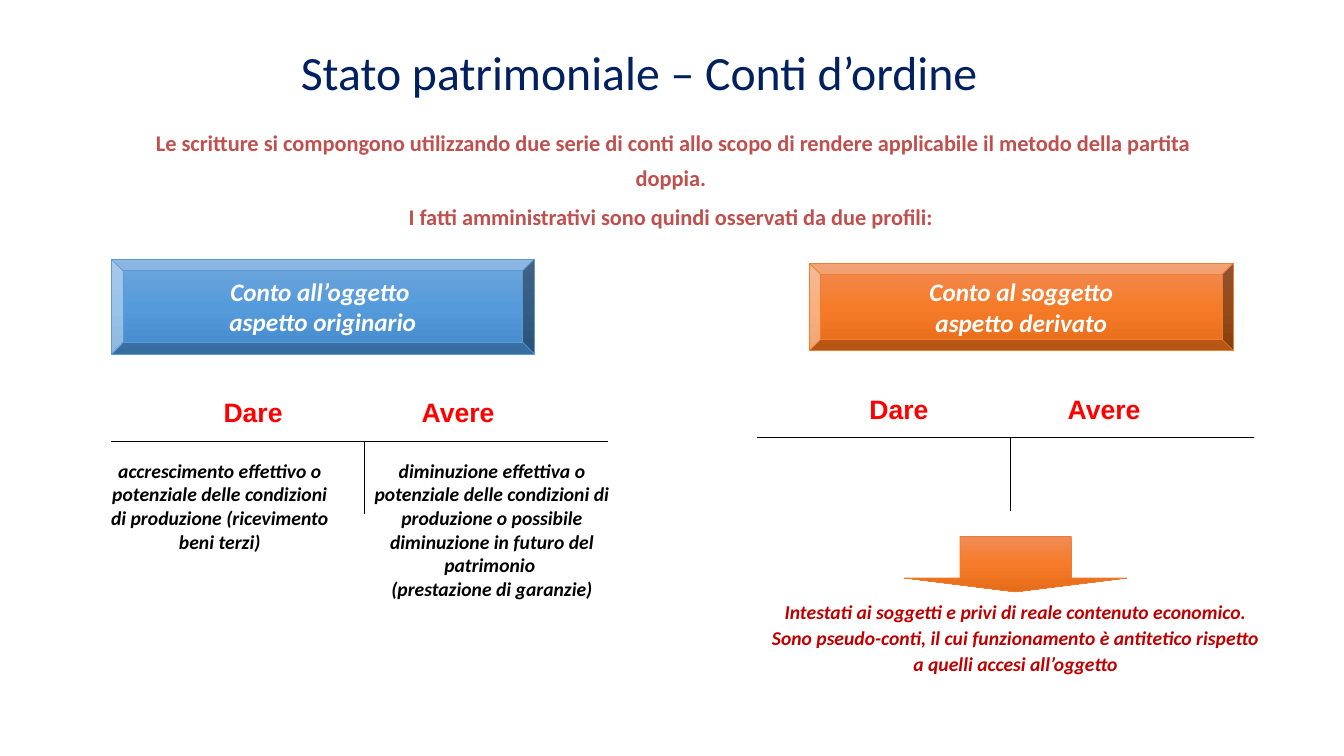
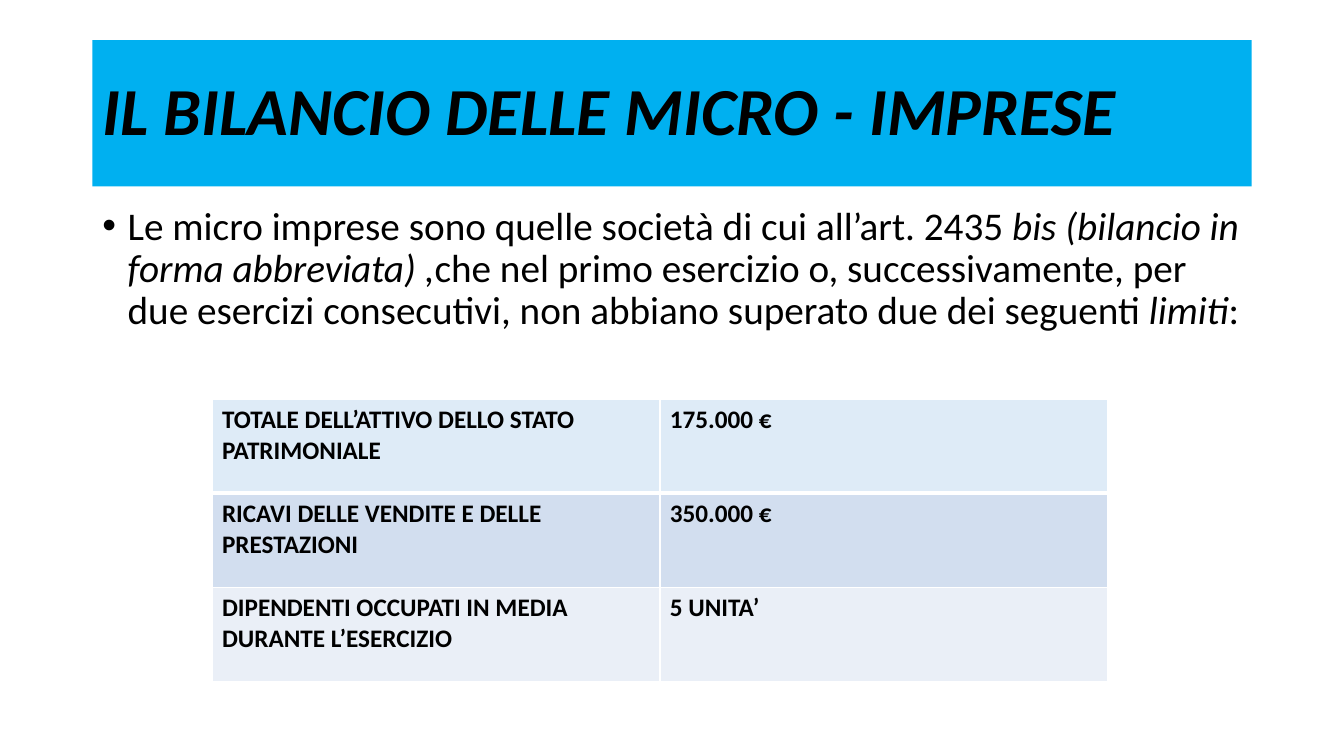
from copy import deepcopy

from lxml.etree import SubElement
from pptx import Presentation
from pptx.dml.color import RGBColor
from pptx.enum.shapes import MSO_SHAPE as SHAPE
from pptx.enum.text import MSO_ANCHOR as ANCHOR, MSO_AUTO_SIZE as AUTO, PP_ALIGN as ALIGN
from pptx.oxml.ns import qn
from pptx.util import Pt

FONT = "Calibri"
BLACK, WHITE, RED = "000000", "FFFFFF", "FF0000"
NAVY, BRICK, DARK_RED, CYAN = "002060", "C0504D", "C00000", "00B0F0"
BLUE_SHADES, BLUE_LINE = ("71A6DB", "559BDB", "448ACA"), "5B9BD5"
ORANGE_SHADES, ORANGE_LINE = ("F18C57", "F67B28", "E56C19"), "ED7D31"
ROW_FILLS = ("DEEBF7", "D2DEEF", "EAEFF7")


def rgb(value):
    return RGBColor.from_string(value)


def place(sp, left, top, width, height):
    sp.left, sp.top, sp.width, sp.height = Pt(left), Pt(top), Pt(width), Pt(height)


def add_run(p, text, size, color, bold=False, italic=False, font=FONT):
    r = p.add_run()
    r.text = text
    r.font.name = font
    r.font.size = Pt(size)
    r.font.bold = bold
    r.font.italic = italic
    r.font.color.rgb = rgb(color)


def write_lines(tf, lines, size, color, italic=True, align=ALIGN.CENTER, spacing=1.0, before=0):
    for i, line in enumerate(lines):
        p = tf.add_paragraph() if i else tf.paragraphs[0]
        p.alignment = align
        p.line_spacing = spacing
        p.space_before = Pt(before)
        add_run(p, line, size, color, bold=True, italic=italic)


def set_title(s, text, box, size, color, align, spacing=1.0, emphasis=False, fill=None):
    sp = s.shapes.title
    place(sp, *box)
    if fill:
        sp.fill.solid()
        sp.fill.fore_color.rgb = rgb(fill)
    tf = sp.text_frame
    tf.auto_size = AUTO.NONE
    tf.vertical_anchor = ANCHOR.MIDDLE
    p = tf.paragraphs[0]
    p.alignment = align
    p.line_spacing = spacing
    add_run(p, text, size, color, bold=emphasis, italic=emphasis)


def add_text(s, box, lines, size, color, **style):
    tf = s.shapes.add_textbox(*map(Pt, box)).text_frame
    tf.word_wrap = True
    write_lines(tf, lines, size, color, **style)


def add_shaded_shape(s, kind, box, shades, line):
    sp = s.shapes.add_shape(kind, *map(Pt, box))
    sp.shadow.inherit = False
    sp.fill.gradient()
    sp.fill.gradient_angle = 270
    first = sp._element.spPr.find(".//" + qn("a:gs"))
    first.addnext(deepcopy(first))
    for i, (stop, shade) in enumerate(zip(sp.fill.gradient_stops, shades)):
        stop.color.rgb = rgb(shade)
        stop.position = i / 2
    sp.line.color.rgb = rgb(line)
    sp.line.width = Pt(0.5)
    return sp


def add_bevel(s, box, lines, shades, line):
    tf = add_shaded_shape(s, SHAPE.BEVEL, box, shades, line).text_frame
    tf.word_wrap = False
    tf.vertical_anchor = ANCHOR.MIDDLE
    write_lines(tf, lines, 18, WHITE)


def set_borders(cell, color, **widths):
    tc_pr = cell._tc.get_or_add_tcPr()
    for i, side in enumerate("LRTB"):
        width = widths.get(side, 0)
        ln = SubElement(tc_pr, qn("a:ln" + side), w=str(Pt(width)))
        if width:
            fill = SubElement(ln, qn("a:solidFill"))
            SubElement(fill, qn("a:srgbClr"), val=color)
        else:
            SubElement(ln, qn("a:noFill"))
        tc_pr.insert(i, ln)


def add_grid(s, left, top, widths, heights):
    frame = s.shapes.add_table(len(heights), len(widths), Pt(left), Pt(top),
                               Pt(sum(widths)), Pt(sum(heights)))
    table = frame.table
    table.first_row = table.horz_banding = False
    for column, width in zip(table.columns, widths):
        column.width = Pt(width)
    for row, height in zip(table.rows, heights):
        row.height = Pt(height)
    return table


def add_t_account(s, left, top):
    table = add_grid(s, left, top, (181.4, 173.6), (34, 52))
    for cell in table.iter_cells():
        cell.fill.background()
    heading, covered = table.cell(0, 0), table.cell(0, 1)
    heading.merge(covered)
    heading.margin_left = Pt(80.5)
    p = heading.text_frame.paragraphs[0]
    p.alignment = ALIGN.LEFT
    tabs = SubElement(p._p.get_or_add_pPr(), qn("a:tabLst"))
    SubElement(tabs, qn("a:tab"), pos=str(Pt(141.5)), algn="l")
    add_run(p, "Dare\tAvere", 19, RED, bold=True, font="Arial")
    for cell in (heading, covered):
        set_borders(cell, BLACK, B=1)
    set_borders(table.cell(1, 0), BLACK, T=1, R=1)
    set_borders(table.cell(1, 1), BLACK, T=1, L=1)


def add_limits_table(s, rows):
    table = add_grid(s, 151.4, 285.2, (320, 320), (67.2,) * len(rows))
    for i, (texts, fill) in enumerate(zip(rows, ROW_FILLS)):
        for j, text in enumerate(texts):
            cell = table.cell(i, j)
            cell.fill.solid()
            cell.fill.fore_color.rgb = rgb(fill)
            set_borders(cell, WHITE, L=1, R=1, T=3 if i == 1 else 1, B=1 if i else 3)
            write_lines(cell.text_frame, [text], 18, BLACK, italic=False, align=ALIGN.LEFT)


def set_bullet(s, box, runs):
    sp = s.placeholders[1]
    place(sp, *box)
    tf = sp.text_frame
    tf.auto_size = AUTO.NONE
    p = tf.paragraphs[0]
    p.line_spacing = 0.9
    p.space_before = Pt(10)
    p_pr = p._p.get_or_add_pPr()
    p_pr.set("marL", str(Pt(18)))
    p_pr.set("indent", str(-Pt(18)))
    SubElement(p_pr, qn("a:buFont"), typeface="Arial")
    SubElement(p_pr, qn("a:buChar"), char="•")
    for text, italic in runs:
        add_run(p, text, 28, BLACK, italic=italic)


def build_accounts_slide(prs):
    s = prs.slides.add_slide(prs.slide_layouts[5])
    set_title(s, "Stato patrimoniale – Conti d’ordine", (24.5, 31, 864, 40), 34.1, NAVY,
              ALIGN.CENTER)
    add_text(s, (87, 83, 788, 60), [
        "Le scritture si compongono utilizzando due serie di conti allo scopo di rendere "
        "applicabile il metodo della partita doppia. ",
        "I fatti amministrativi sono quindi osservati da due profili: ",
    ], 16, BRICK, italic=False, spacing=1.3, before=3.2)
    add_bevel(s, (79.4, 185, 302.4, 68), ["Conto all’oggetto ", "aspetto originario"],
              BLUE_SHADES, BLUE_LINE)
    add_bevel(s, (578, 188, 303, 62.5), ["Conto al soggetto", "aspetto derivato"],
              ORANGE_SHADES, ORANGE_LINE)
    add_t_account(s, 79.2, 281.2)
    add_t_account(s, 540.6, 278.8)
    add_text(s, (72, 324.2, 170, 75), [
        "accrescimento effettivo o potenziale delle condizioni di produzione "
        "(ricevimento beni terzi)",
    ], 14, BLACK)
    add_text(s, (253, 324.2, 197, 109), [
        "diminuzione effettiva o potenziale delle condizioni di produzione o possibile "
        "diminuzione in futuro del patrimonio ",
        "(prestazione di garanzie)",
    ], 14, BLACK)
    add_text(s, (540, 423.3, 371, 63), [
        "Intestati ai soggetti e privi di reale contenuto economico. Sono pseudo-conti, "
        "il cui funzionamento è antitetico rispetto a quelli accesi all’oggetto",
    ], 14, DARK_RED, spacing=1.1)
    arrow = add_shaded_shape(s, SHAPE.DOWN_ARROW, (646, 383.2, 159, 39.6), ORANGE_SHADES,
                             ORANGE_LINE)
    arrow.adjustments[1] = 0.25


def build_micro_slide(prs):
    s = prs.slides.add_slide(prs.slide_layouts[1])
    set_title(s, "IL BILANCIO DELLE MICRO - IMPRESE", (66, 28.75, 828, 104.4), 48, BLACK,
              ALIGN.LEFT, spacing=0.9, emphasis=True, fill=CYAN)
    set_bullet(s, (66, 143.75, 828, 342.6), [
        ("Le micro imprese sono quelle società di cui all’art. 2435 ", False),
        ("bis (bilancio in forma abbreviata) ,", True),
        ("che nel primo esercizio o, successivamente, per due esercizi consecutivi, "
         "non abbiano superato due dei seguenti ", False),
        ("limiti", True),
        (":", False),
    ])
    add_limits_table(s, [
        ("TOTALE DELL’ATTIVO DELLO STATO PATRIMONIALE", "175.000 €"),
        ("RICAVI DELLE VENDITE E DELLE PRESTAZIONI", "350.000 €"),
        ("DIPENDENTI OCCUPATI IN MEDIA DURANTE L’ESERCIZIO", "5 UNITA’"),
    ])


def main():
    prs = Presentation()
    prs.slide_width, prs.slide_height = Pt(960), Pt(540)
    build_accounts_slide(prs)
    build_micro_slide(prs)
    prs.save("out.pptx")


if __name__ == "__main__":
    main()
